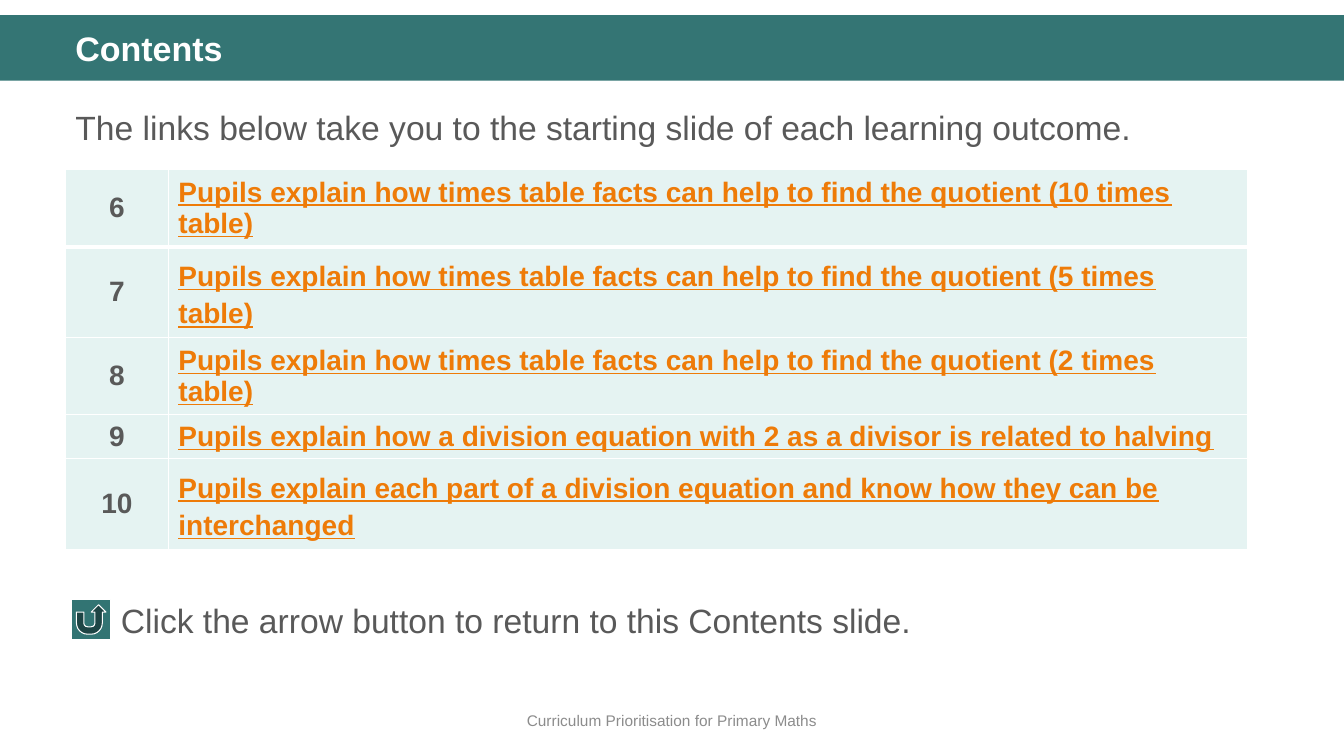
from lxml.etree import SubElement
from pptx import Presentation
from pptx.dml.color import RGBColor
from pptx.enum.shapes import MSO_SHAPE as Shape
from pptx.enum.text import MSO_ANCHOR as Anchor, PP_ALIGN as Align
from pptx.oxml.ns import qn
from pptx.util import Inches, Pt

COLORS = {
    "banner": "347574",
    "button": "327473",
    "cell": "E5F3F2",
    "link": "EE7B08",
    "text": "595959",
    "footer": "8C8C8C",
    "white": "FFFFFF",
}

# Number, learning outcome, line spacing
OUTCOMES = [
    ("6", "Pupils explain how times table facts can help to find the quotient (10 times table)", None),
    ("7", "Pupils explain how times table facts can help to find the quotient (5 times table)", 1.2),
    ("8", "Pupils explain how times table facts can help to find the quotient (2 times table)", None),
    ("9", "Pupils explain how a division equation with 2 as a divisor is related to halving", None),
    ("10", "Pupils explain each part of a division equation and know how they can be interchanged", 1.2),
]


def rgb(name):
    return RGBColor.from_string(COLORS[name])


class SlideBuilder:
    def __init__(self, slide, font="Arial"):
        self.slide = slide
        self.font = font

    def add_words(self, frame, text, size, color, bold=False, underline=False,
                  align=Align.LEFT, spacing=None, before=None):
        paragraph = frame.paragraphs[0]
        paragraph.alignment = align
        paragraph.line_spacing = spacing
        if before is not None:
            paragraph.space_before = Pt(before)
        run = paragraph.add_run()
        run.text = text
        run.font.name = self.font
        run.font.size = Pt(size)
        run.font.bold = bold
        run.font.underline = underline
        run.font.color.rgb = rgb(color)

    def text(self, left, top, width, height, text, size, color,
             anchor=Anchor.TOP, **style):
        box = self.slide.shapes.add_textbox(
            Inches(left), Inches(top), Inches(width), Inches(height))
        frame = box.text_frame
        frame.word_wrap = True
        frame.vertical_anchor = anchor
        self.add_words(frame, text, size, color, **style)

    def shape(self, preset, left, top, width, height, fill, line=None):
        shape = self.slide.shapes.add_shape(
            preset, Inches(left), Inches(top), Inches(width), Inches(height))
        shape.shadow.inherit = False
        shape.fill.solid()
        shape.fill.fore_color.rgb = rgb(fill)
        if line:
            shape.line.color.rgb = rgb(line)
            shape.line.width = Pt(0.75)
        else:
            shape.line.fill.background()

    def borders(self, cell, top, bottom):
        properties = cell._tc.get_or_add_tcPr()
        for side, width in (("L", 1), ("R", 1), ("T", top), ("B", bottom)):
            line = SubElement(properties, qn(f"a:ln{side}"), w=str(Pt(width)))
            fill = SubElement(line, qn("a:solidFill"))
            SubElement(fill, qn("a:srgbClr"), val=COLORS["white"])

    def outcome_table(self, left, top, widths, row_height, outcomes):
        table = self.slide.shapes.add_table(
            len(outcomes), len(widths), Inches(left), Inches(top),
            Inches(sum(widths)), Inches(row_height * len(outcomes))).table
        table.first_row = False
        table.horz_banding = False
        for column, width in zip(table.columns, widths):
            column.width = Inches(width)
        for index, (number, outcome, spacing) in enumerate(outcomes):
            row = table.rows[index]
            row.height = Inches(row_height)
            for cell in row.cells:
                # The first row is set off by a thicker rule
                self.borders(cell, 3 if index == 1 else 1, 3 if index == 0 else 1)
                cell.fill.solid()
                cell.fill.fore_color.rgb = rgb("cell")
                cell.vertical_anchor = Anchor.MIDDLE
            number_cell, outcome_cell = row.cells
            self.add_words(number_cell.text_frame, number, 20, "text",
                           bold=True, align=Align.CENTER)
            self.add_words(outcome_cell.text_frame, outcome, 20, "link",
                           bold=True, underline=True, spacing=spacing)


def main():
    deck = Presentation()
    deck.slide_width = Inches(13.33)
    deck.slide_height = Inches(7.5)
    page = SlideBuilder(deck.slides.add_slide(deck.slide_layouts[6]))

    # Title banner
    page.shape(Shape.RECTANGLE, 0, 0.15, 13.33, 0.65, "banner")
    page.text(0.65, 0.27, 12.18, 0.47, "Contents", 24.3, "white",
              bold=True, spacing=0.9)

    # Introduction and learning outcomes
    page.text(0.65, 0.93, 12.18, 0.6,
              "The links below take you to the starting slide of each learning outcome.",
              24, "text", spacing=1.2, before=10)
    page.outcome_table(0.65, 1.68, (1.02, 10.7), 0.41, OUTCOMES)

    # Return button and its explanation
    page.shape(Shape.ACTION_BUTTON_RETURN, 0.71, 5.95, 0.39, 0.39, "button", "white")
    page.text(1.1, 5.9, 11.32, 0.5,
              "Click the arrow button to return to this Contents slide.", 24, "text")

    # Footer
    page.text(0, 6.95, 13.33, 0.4, "Curriculum Prioritisation for Primary Maths",
              11, "footer", anchor=Anchor.MIDDLE, align=Align.CENTER)

    deck.save("out.pptx")


if __name__ == "__main__":
    main()
